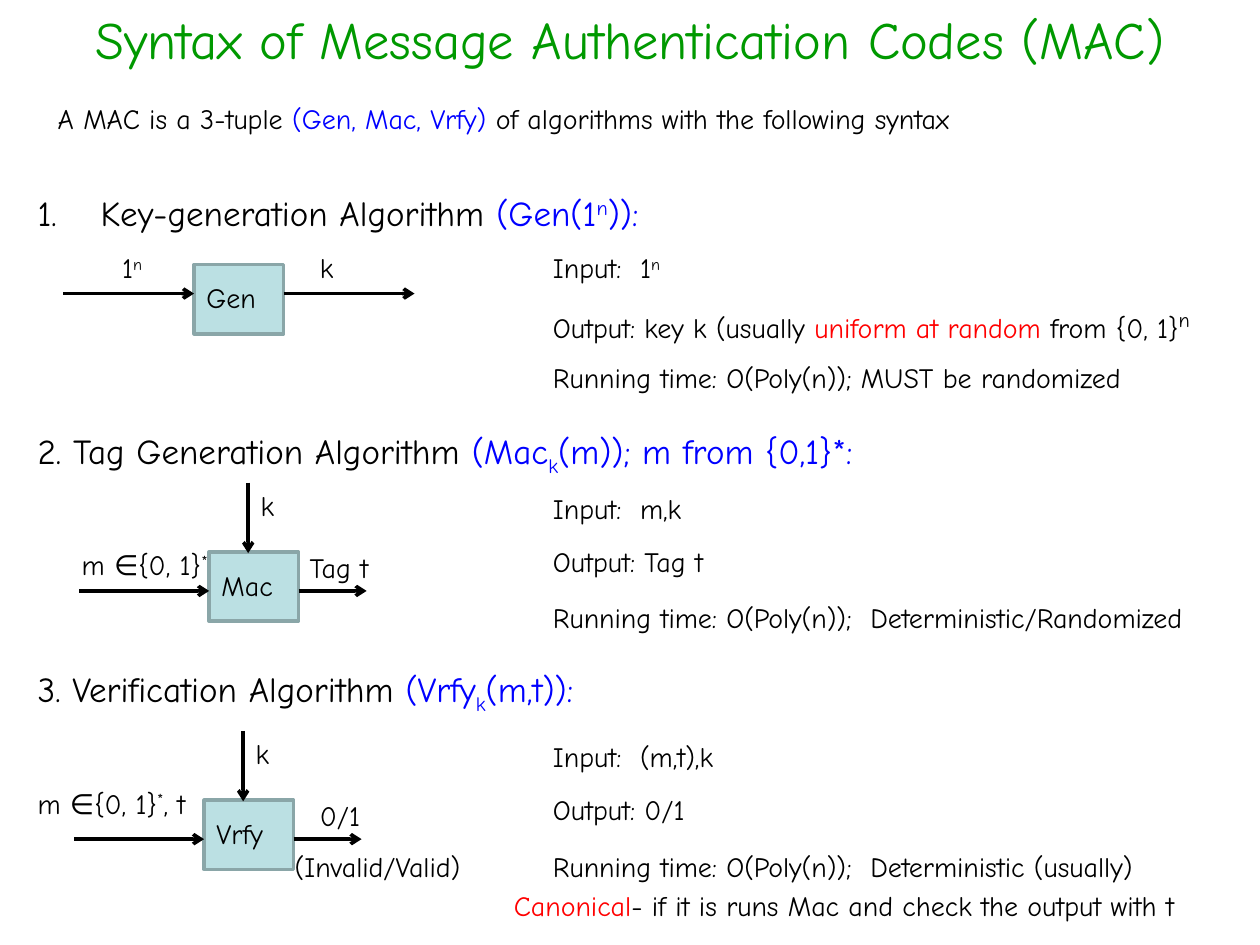
from dataclasses import dataclass

from lxml import etree
from pptx import Presentation
from pptx.dml.color import RGBColor
from pptx.enum.shapes import MSO_CONNECTOR, MSO_SHAPE
from pptx.enum.text import PP_ALIGN
from pptx.oxml.ns import qn
from pptx.util import Inches, Pt

LEFT, CENTER = PP_ALIGN.LEFT, PP_ALIGN.CENTER
STRAIGHT = MSO_CONNECTOR.STRAIGHT
RECT = MSO_SHAPE.RECTANGLE
SUP, SUB = 30000, -25000
BOX_W, BOX_H = 0.71, 0.55
LABEL_H = 0.37


@dataclass(frozen=True)
class Theme:
    font: str = "Comic Neue"
    title: str = "009900"
    text: str = "000000"
    formal: str = "0000FF"
    alert: str = "FF0000"
    box_fill: str = "BBE0E3"
    box_line: str = "8AA6A8"
    title_size: int = 30
    heading_size: int = 20
    body_size: int = 16
    line_width: int = 2


T = Theme()


def rgb(value):
    return RGBColor.from_string(value)


def run(text, color=T.text, base=0, size=None):
    return text, color, base, size


def add_text(slide, x, y, w, runs, h=LABEL_H, size=T.body_size, align=LEFT, hang=0, number=False):
    """Place one paragraph; hang is its hanging indent in inches."""
    if isinstance(runs, str):
        runs = [run(runs)]
    tf = slide.shapes.add_textbox(Inches(x), Inches(y), Inches(w), Inches(h)).text_frame
    tf.word_wrap = True
    p = tf.paragraphs[0]
    p.alignment = align
    if hang:
        pPr = p._p.get_or_add_pPr()
        pPr.set("marL", str(Inches(hang)))
        pPr.set("indent", str(Inches(-hang)))
        if number:
            etree.SubElement(pPr, qn("a:buFont"), typeface=T.font)
            etree.SubElement(pPr, qn("a:buAutoNum"), type="arabicPeriod")
    for text, color, base, own_size in runs:
        r = p.add_run()
        r.text = text
        r.font.name = T.font
        r.font.size = Pt(own_size or size)
        r.font.color.rgb = rgb(color)
        if base:
            r._r.get_or_add_rPr().set("baseline", str(base))


def add_arrow(slide, x1, y1, x2, y2):
    cn = slide.shapes.add_connector(STRAIGHT, Inches(x1), Inches(y1), Inches(x2), Inches(y2))
    cn.line.color.rgb = rgb(T.text)
    cn.line.width = Pt(T.line_width)
    etree.SubElement(cn.line._get_or_add_ln(), qn("a:tailEnd"), type="arrow")
    etree.SubElement(cn._element.spPr, qn("a:effectLst"))


def add_machine(slide, x, y, name, arrow_dy, in_len, out_len):
    """Named algorithm box at x, y with an arrow into it and one out of it."""
    sp = slide.shapes.add_shape(RECT, Inches(x), Inches(y), Inches(BOX_W), Inches(BOX_H))
    sp.shadow.inherit = False
    sp.fill.solid()
    sp.fill.fore_color.rgb = rgb(T.box_fill)
    sp.line.color.rgb = rgb(T.box_line)
    sp.line.width = Pt(T.line_width)
    add_text(slide, x, y + 0.08, 0.86, name)
    line_y = y + arrow_dy
    add_arrow(slide, x - in_len, line_y, x, line_y)
    add_arrow(slide, x + BOX_W, line_y, x + BOX_W + out_len, line_y)


def add_keyed_machine(slide, x, y, name):
    """Machine that also takes the key k from above."""
    add_machine(slide, x, y, name, arrow_dy=0.31, in_len=1.03, out_len=0.54)
    key_x, key_y = x + 0.31, y - 0.55
    add_arrow(slide, key_x, key_y, key_x, y + 0.01)
    add_text(slide, key_x, key_y, 0.51, "k")


def add_details(slide, x, y, given, output, running):
    add_text(slide, x, y, 2.83, given)
    add_text(slide, x, y + 0.42, 6.1, output)
    add_text(slide, x, y + 0.87, 5.9, "Running time: O(Poly(n)); " + running)


def add_header(slide):
    add_text(slide, 0, 0.01, 10, [run("Syntax of Message Authentication Codes (MAC)", T.title)],
             h=0.51, size=T.title_size, align=CENTER)
    add_text(slide, 0.36, 0.76, 8.42, [
        run("A MAC is a 3-tuple "), run("(Gen, Mac, Vrfy) ", T.formal),
        run("of algorithms with the following syntax")], hang=0.31)


def add_headings(slide, x, y, step):
    headings = [
        [run("Key-generation Algorithm "), run("(Gen(1", T.formal),
         run("n", T.formal, SUP), run(")):", T.formal)],
        [run("2. Tag Generation Algorithm "), run("(Mac", T.formal),
         run("k", T.formal, SUB), run("(m)); m from {0,1}*:", T.formal)],
        [run("3. Verification Algorithm "), run("(Vrfy", T.formal),
         run("k", T.formal, SUB), run("(m,t)):", T.formal)],
    ]
    for i, runs in enumerate(headings):
        add_text(slide, x, y + i * step, 9.29, runs, h=0.44, size=T.heading_size,
                 hang=0.5, number=i == 0)


def add_key_generation(slide, x, y, details_x):
    add_machine(slide, x, y, "Gen", arrow_dy=0.23, in_len=1.04, out_len=1.04)
    security = [run("1"), run("n", base=SUP)]
    add_text(slide, x - 0.67, y - 0.16, 0.51, security)
    add_text(slide, x + 0.9, y - 0.16, 0.51, "k")
    output = [run("Output: key k (usually "), run("uniform at random ", T.alert),
              run("from {0, 1}"), run("n", base=SUP, size=T.heading_size)]
    add_details(slide, details_x, y - 0.16, [run("Input:  1"), security[1]], output,
                "MUST be randomized")


def add_tag_generation(slide, x, y, details_x):
    add_keyed_machine(slide, x, y, "Mac")
    add_text(slide, x - 1.11, y - 0.08, 1.26, [run("m ∈{0, 1}"), run("*", base=SUP)])
    add_text(slide, x + 0.7, y - 0.06, 1.61, "Tag t")
    add_details(slide, details_x, y - 0.53, "Input:  m,k", "Output: Tag t",
                " Deterministic/Randomized")


def add_verification(slide, x, y, details_x):
    add_keyed_machine(slide, x, y, "Vrfy")
    add_text(slide, x - 1.42, y - 0.16, 1.42,
             [run("m ∈{0, 1}"), run("*", base=SUP), run(", t")])
    add_text(slide, x + 0.82, y - 0.06, 1.61, "0/1")
    add_text(slide, x + 0.62, y + 0.34, 1.81, "(Invalid/Valid)")
    add_details(slide, details_x, y - 0.53, "Input:  (m,t),k", "Output: 0/1",
                " Deterministic (usually)")
    add_text(slide, details_x - 0.31, y + 0.65, 5.9, [
        run("Canonical", T.alert), run("- if it is runs Mac and check the output with t")])


def main():
    prs = Presentation()
    prs.slide_width, prs.slide_height = Inches(10), Inches(7.5)
    slide = prs.slides.add_slide(prs.slide_layouts[6])
    details_x = 4.29
    add_header(slide)
    add_headings(slide, 0.2, 1.47, 1.89)
    add_key_generation(slide, 1.54, 2.1, details_x)
    add_tag_generation(slide, 1.66, 4.38, details_x)
    add_verification(slide, 1.62, 6.35, details_x)
    prs.save("out.pptx")


if __name__ == "__main__":
    main()
